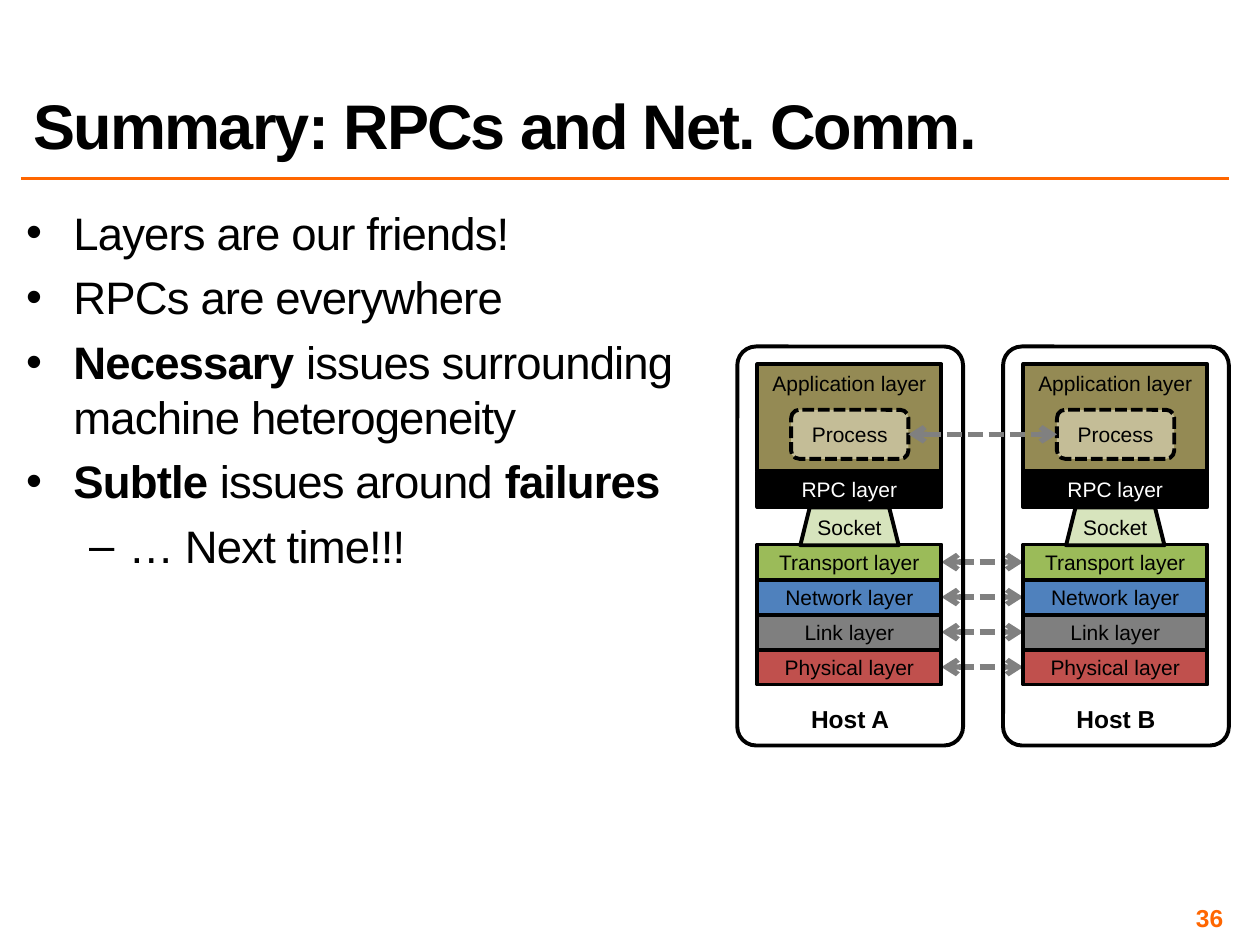
from dataclasses import dataclass

from lxml.etree import SubElement
from pptx import Presentation
from pptx.dml.color import RGBColor as Color
from pptx.enum.dml import MSO_LINE as Dash
from pptx.enum.shapes import MSO_CONNECTOR as Connector, MSO_SHAPE as Shape
from pptx.enum.text import MSO_ANCHOR as Anchor, PP_ALIGN as Align
from pptx.oxml.ns import qn
from pptx.util import Pt


@dataclass(frozen=True)
class Theme:
    """Colours, type sizes and line weights of the slide."""
    font: str = "Arial"
    ink: str = "000000"
    paper: str = "FFFFFF"
    accent: str = "FF6600"
    link: str = "808080"
    application: str = "948A54"
    process: str = "C4BD97"
    socket: str = "D7E4BD"
    transport: str = "9BBB59"
    network: str = "4F81BD"
    data_link: str = "7F7F7F"
    physical: str = "C0504D"
    title_size: float = 36
    body_size: float = 26
    label_size: float = 14
    layer_size: float = 12
    outline: float = 2.25
    link_width: float = 3


class SlidePainter:
    """Draws styled elements on the current slide."""

    def __init__(self, page, theme):
        self.page = page
        self.theme = theme

    def style(self, span, size, color=None, bold=False, spacing=0):
        """Set the look of one run of text."""
        font = span.font
        font.name, font.size, font.bold = self.theme.font, Pt(size), bold
        font.color.rgb = Color.from_string(color or self.theme.ink)
        if spacing:
            span._r.get_or_add_rPr().set("spc", str(round(spacing * 100)))

    def text(self, area, wording, size, color=None, align=Align.LEFT,
             anchor=Anchor.TOP, inset=None, spacing=0, leading=None):
        """Add a text box holding one bold paragraph."""
        frame = self.text_frame(area, anchor, inset)
        frame.text = wording
        para = frame.paragraphs[0]
        para.alignment, para.line_spacing = align, leading
        self.style(para.runs[0], size, color, True, spacing)

    def text_frame(self, area, anchor=Anchor.TOP, inset=None):
        """Add an empty wrapping text box and return its frame."""
        frame = self.page.shapes.add_textbox(*map(Pt, area)).text_frame
        frame.word_wrap, frame.vertical_anchor = True, anchor
        if inset is not None:
            frame.margin_left = frame.margin_right = Pt(inset)
            frame.margin_top = frame.margin_bottom = Pt(inset)
        return frame

    def bullets(self, area, items):
        """Add a bulleted list of (level, spans) items."""
        frame = self.text_frame(area, inset=3)
        marks = [("•", 27, -27), ("–", 58.5, -22.5)]
        for index, (level, spans) in enumerate(items):
            para = frame.add_paragraph() if index else frame.paragraphs[0]
            para.level, para.space_before = level, Pt(5.8)
            mark, margin, indent = marks[level]
            properties = para._p.get_or_add_pPr()
            properties.set("marL", str(Pt(margin)))
            properties.set("indent", str(Pt(indent)))
            SubElement(properties, qn("a:buFont"), typeface=self.theme.font)
            SubElement(properties, qn("a:buChar"), char=mark)
            for wording, bold in spans:
                span = para.add_run()
                span.text = wording
                self.style(span, self.theme.body_size, bold=bold, spacing=-0.5)

    def box(self, kind, area, wording, fill=None, size=None, color=None, bold=False,
            anchor=Anchor.MIDDLE, wrap=True, side_inset=7.2, dashed=False):
        """Add an outlined shape with a centred label."""
        box = self.page.shapes.add_shape(kind, *map(Pt, area))
        box.shadow.inherit = False
        if fill:
            box.fill.solid()
            box.fill.fore_color.rgb = Color.from_string(fill)
        else:
            box.fill.background()
        box.line.color.rgb = Color.from_string(self.theme.ink)
        box.line.width = Pt(self.theme.outline)
        if dashed:
            box.line.dash_style = Dash.SQUARE_DOT
        frame = box.text_frame
        frame.text = wording
        frame.word_wrap, frame.vertical_anchor = wrap, anchor
        frame.margin_left = frame.margin_right = Pt(side_inset)
        para = frame.paragraphs[0]
        para.alignment = Align.CENTER
        self.style(para.runs[0], size or self.theme.layer_size, color, bold)
        return box

    def line(self, start, end, color, width):
        """Add a plain straight connector."""
        line = self.page.shapes.add_connector(Connector.STRAIGHT, *map(Pt, start + end))
        line.line.color.rgb = Color.from_string(color)
        line.line.width = Pt(width)
        SubElement(line._element.spPr, qn("a:effectLst"))
        return line

    def link(self, start, end):
        """Add a dashed connector with an arrowhead at both ends."""
        link = self.line(start, end, self.theme.link, self.theme.link_width)
        link.line.dash_style = Dash.SQUARE_DOT
        for tip in ("a:headEnd", "a:tailEnd"):
            SubElement(link.line._get_or_add_ln(), qn(tip), type="arrow")
        return link

    def host(self, left, name, layers, top, height):
        """Add one host and return its process and its lower layer boxes."""
        theme, inner, width = self.theme, left + 11.5, 105.2
        self.box(Shape.RECTANGLE, (inner, 208.1, width, 61.2), "Application layer",
                 theme.application, anchor=Anchor.TOP, wrap=False)
        stack = [self.box(Shape.RECTANGLE, (inner, top + row * height, width, height),
                          wording, fill, wrap=False)
                 for row, (wording, fill) in enumerate(layers)]
        frame = self.box(Shape.ROUNDED_RECTANGLE, (left, 198, 129, 228), name,
                         size=theme.label_size, bold=True, anchor=Anchor.BOTTOM)
        frame.adjustments[0] = 0.083
        self.box(Shape.TRAPEZOID, (left + 36, 290, 56.2, 21.6), "Socket",
                 theme.socket, side_inset=0)
        process = self.box(Shape.FLOWCHART_ALTERNATE_PROCESS, (left + 30.8, 234.2, 67, 28),
                           "Process", theme.process, dashed=True)
        self.box(Shape.RECTANGLE, (inner, 269.8, width, 20), "RPC layer",
                 theme.ink, color=theme.paper, wrap=False)
        return process, stack


def main():
    """Build the summary slide and save it."""
    theme = Theme()
    deck = Presentation()
    deck.slide_width, deck.slide_height = Pt(720), Pt(540)
    painter = SlidePainter(deck.slides.add_slide(deck.slide_layouts[6]), theme)

    painter.line((12, 102), (702, 102), theme.accent, 2)
    painter.bullets((12, 114, 410, 396), [
        (0, [("Layers are our friends!", False)]),
        (0, [("RPCs are everywhere", False)]),
        (0, [("Necessary", True), (" issues surrounding machine heterogeneity", False)]),
        (0, [("Subtle", True), (" issues around ", False), ("failures", True)]),
        (1, [("… Next time!!!", False)]),
    ])
    painter.text((534, 516, 168, 16.8), "36", theme.label_size, theme.accent,
                 Align.RIGHT, Anchor.MIDDLE, inset=3)
    painter.text((12, 12, 690, 84), "Summary: RPCs and Net. Comm.", theme.title_size,
                 anchor=Anchor.BOTTOM, spacing=-1, leading=0.8)

    layers = [("Transport layer", theme.transport), ("Network layer", theme.network),
              ("Link layer", theme.data_link), ("Physical layer", theme.physical)]
    top, height = 311.2, 20
    middles = [top + (row + 0.5) * height for row in range(len(layers))]
    links = [painter.link((538, middle), (584.8, middle)) for middle in middles]
    (process_a, stack_a), (process_b, stack_b) = [
        painter.host(left, name, layers, top, height)
        for left, name in ((421.3, "Host A"), (573.2, "Host B"))]
    links.append(painter.link((519.1, 248.2), (604, 248.2)))
    for link, start, end in zip(links, stack_a + [process_a], stack_b + [process_b]):
        link.begin_connect(start, 3)
        link.end_connect(end, 1)
    deck.save("out.pptx")


if __name__ == "__main__":
    main()
